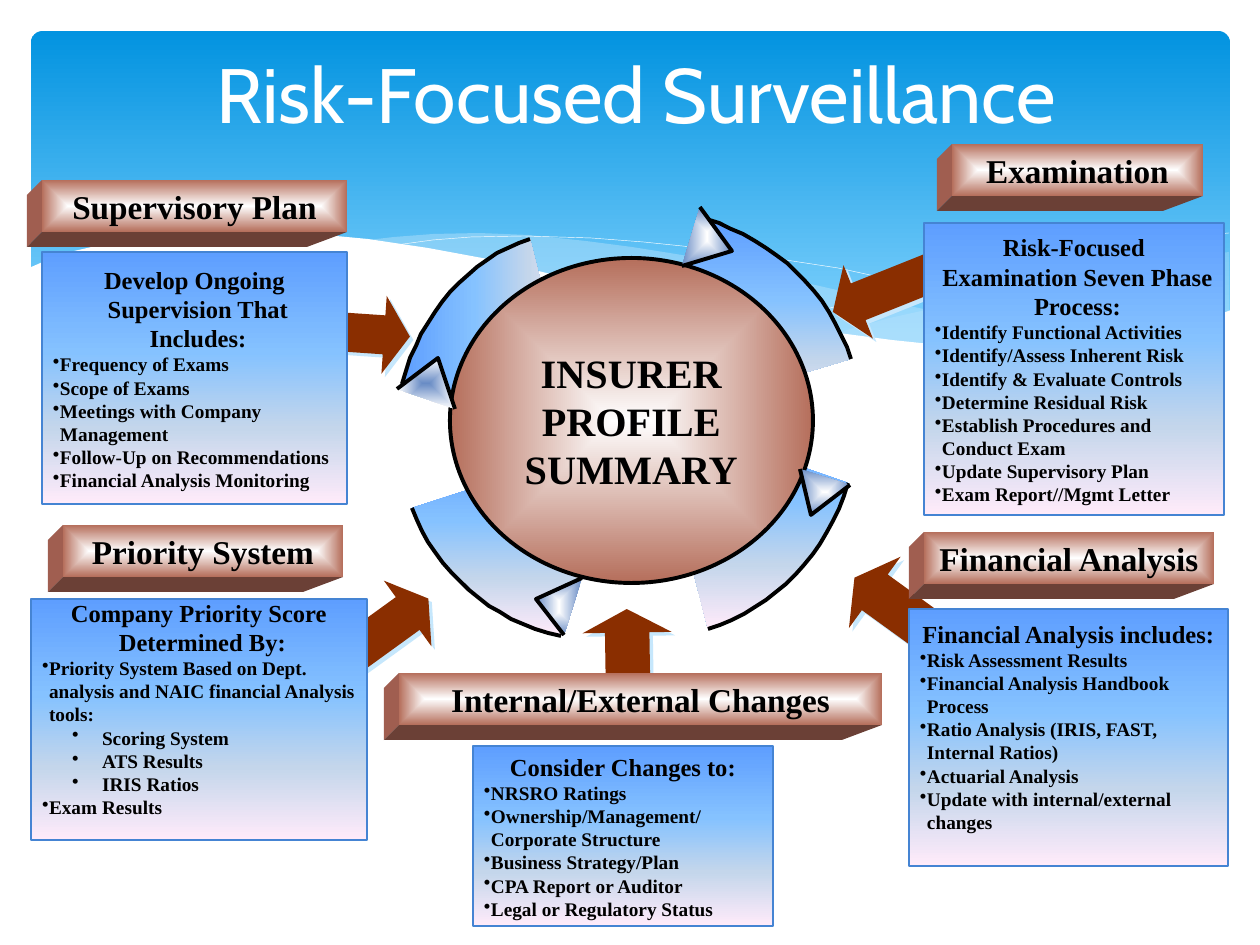
from dataclasses import dataclass

from lxml import etree
from pptx import Presentation
from pptx import util as u
from pptx.dml.color import RGBColor
from pptx.enum import shapes, text
from pptx.oxml import parse_xml
from pptx.oxml.ns import nsdecls, qn

PX = 914400 / 126


@dataclass(frozen=True)
class Theme:
    serif: str = "Times New Roman"
    sans: str = "Cabin"
    title: int = 44
    hub: int = 23
    bar: int = 19
    heading: int = 14
    body: int = 11
    black: str = "000000"
    white: str = "FFFFFF"
    wave: str = "C6E7FC"
    arrow: str = "8A2E00"
    bar_side: str = "A05E50"
    bar_base: str = "6B4036"
    border: str = "4584D3"
    sky: tuple = ((0, "0293E0"), (90, "83D3FE"))
    panel: tuple = ((0, "5E9EFF"), (40, "85C2FF"), (70, "C4D6EB"), (100, "FFEBFA"))
    copper: tuple = ((0, "FFFFFF"), (100, "B56E5B"))
    steel: tuple = ((0, "FFFFFF"), (100, "698CC5"))
    steel_dark: tuple = ((0, "698CC5"), (100, "FFFFFF"))


THEME = Theme()


def px(*lengths):
    return [u.Emu(round(length * PX)) for length in lengths]


def paint(shape, fill=None, line=None, width=0.75, alpha=None, angle=90):
    """Fill with a colour or gradient stops; an angle of None runs from the centre."""
    shape.shadow.inherit = False
    shape.fill.background()
    if isinstance(fill, str):
        shape.fill.solid()
        shape.fill.fore_color.rgb = RGBColor.from_string(fill)
        if alpha:
            color = next(shape._element.spPr.iter(qn("a:srgbClr")))
            etree.SubElement(color, qn("a:alpha")).set("val", str(alpha * 1000))
    elif fill:
        stops = "".join(f'<a:gs pos="{position * 1000}"><a:srgbClr val="{color}"/></a:gs>'
                        for position, color in fill)
        direction = f'<a:lin ang="{(angle or 0) * 60000}" scaled="0"/>'
        if angle is None:
            direction = ('<a:path path="rect"><a:fillToRect l="50000" t="50000" '
                         'r="50000" b="50000"/></a:path>')
        properties = shape._element.spPr
        properties.replace(properties.find(qn("a:noFill")), parse_xml(
            f'<a:gradFill {nsdecls("a")} rotWithShape="1"><a:gsLst>{stops}</a:gsLst>'
            f'{direction}</a:gradFill>'))
    if line:
        shape.line.color.rgb = RGBColor.from_string(line)
        shape.line.width = u.Pt(width)
    else:
        shape.line.fill.background()
    return shape


def add_preset(slide, kind, box, **style):
    return paint(slide.shapes.add_shape(kind, *px(*box)), **style)


def add_outline(slide, points, close=True, **style):
    builder = slide.shapes.build_freeform(*points[0], scale=PX)
    builder.add_line_segments(points[1:], close=close)
    return paint(builder.convert_to_shape(), **style)


def set_frame(shape, bottom=6, right=11):
    frame = shape.text_frame
    frame.word_wrap = True
    frame.vertical_anchor = text.MSO_ANCHOR.MIDDLE
    frame.margin_left, frame.margin_top, frame.margin_right, frame.margin_bottom = px(
        11, 6, right, bottom)
    return frame


def format_paragraph(paragraph, size, color=THEME.black, name=THEME.serif, bold=True,
                     align=text.PP_ALIGN.CENTER):
    paragraph.alignment = align
    for run in paragraph.runs:
        font = run.font
        font.size, font.name, font.bold = u.Pt(size), name, bold
        font.color.rgb = RGBColor.from_string(color)


def indent(paragraph, left, hanging, bullet):
    properties = paragraph._p.get_or_add_pPr()
    left, hanging = px(left, hanging)
    properties.set("marL", str(left))
    properties.set("indent", str(-hanging))
    if bullet:
        etree.SubElement(properties, qn("a:buChar")).set("char", "•")


def add_backdrop(slide):
    banner = add_preset(slide, shapes.MSO_SHAPE.ROUNDED_RECTANGLE, (31, 31, 1199, 340),
                        fill=THEME.sky)
    banner.adjustments[0] = 0.034
    right_wave = [
        (1229, 252), (1178, 260), (1123, 268), (1085, 277), (1014, 293), (949, 305), (890, 318),
        (833, 334), (871, 339), (922, 345), (969, 348), (1012, 350), (1052, 349), (1087, 347),
        (1121, 342), (1150, 337), (1178, 329), (1229, 311)]
    long_wave = [
        (1125, 344), (1055, 334), (977, 320), (890, 302), (793, 280), (736, 265), (682, 255),
        (632, 247), (586, 241), (529, 235), (479, 233), (433, 234), (394, 237), (360, 241),
        (407, 248), (456, 256), (509, 266), (566, 280), (619, 292), (713, 312), (799, 329),
        (876, 340), (943, 347), (1003, 350), (1056, 350), (1104, 348)]
    crests = [
        [(389, 246), (433, 240), (471, 237), (524, 236), (591, 238), (643, 242), (701, 248),
         (766, 257), (838, 268), (916, 285), (1002, 304), (1095, 329), (1143, 343)],
        [(772, 324), (823, 310), (876, 296), (942, 281), (1016, 265), (1091, 251), (1146, 242),
         (1198, 236), (1229, 233)]]
    white_wave = [
        (1231, 310), (1196, 323), (1159, 334), (1117, 342), (1071, 347), (1019, 349), (959, 347),
        (892, 340), (816, 330), (730, 315), (634, 294), (563, 277), (493, 260), (428, 248),
        (368, 239), (315, 234), (266, 232), (223, 232), (184, 233), (150, 236), (120, 241),
        (96, 246), (74, 251), (58, 256), (45, 261), (29, 268), (29, 415), (1231, 415)]
    add_outline(slide, right_wave, fill=THEME.wave, alpha=29)
    add_outline(slide, long_wave, fill=THEME.wave, alpha=40)
    for crest in crests:
        add_outline(slide, crest, close=False, line=THEME.white, width=0.25)
    add_outline(slide, white_wave, fill=THEME.white)


def add_title(slide, box, wording):
    frame = set_frame(slide.shapes.add_textbox(*px(*box)), right=30)
    frame.text = wording
    format_paragraph(frame.paragraphs[0], THEME.title, THEME.white, THEME.sans, bold=False)


def add_arrow(slide, box, rotation, head):
    arrow = add_preset(slide, shapes.MSO_SHAPE.LEFT_ARROW, box, fill=THEME.arrow)
    arrow.adjustments[0], arrow.adjustments[1] = 0.5, head
    arrow.rotation = rotation
    effects = arrow._element.spPr.find(qn("a:effectLst"))
    effects.append(parse_xml(
        f'<a:outerShdw {nsdecls("a")} dist="35560" dir="2700000" algn="ctr" rotWithShape="0">'
        f'<a:srgbClr val="{THEME.wave}"/></a:outerShdw>'))


def add_sweep(slide, curve, centre, angle):
    """Draw a wedge from the centre whose outer Bezier edge alone is outlined."""
    def point(t):
        weights = ((1 - t) ** 3, 3 * t * (1 - t) ** 2, 3 * t * t * (1 - t), t ** 3)
        return tuple(round(sum(w * p[axis] for w, p in zip(weights, curve))) for axis in (0, 1))

    edge = [point(step / 16) for step in range(17)]
    add_outline(slide, edge + [centre], fill=THEME.panel, angle=angle)
    add_outline(slide, edge, close=False, line=THEME.black, width=2.25)


def add_cycle(slide, hub_box):
    sweeps = [
        (((848, 483), (828, 553), (775, 608), (708, 629)), (653, 415), 90),
        (((561, 636), (491, 621), (435, 571), (412, 508)), (610, 444), 90),
        (((706, 219), (775, 241), (829, 292), (851, 359)), (636, 423), 90),
        (((402, 384), (421, 314), (469, 258), (530, 239)), (583, 451), 0)]
    tips = [
        (((700, 207), (732, 251), (682, 266)), THEME.steel),
        (((564, 635), (536, 599), (582, 578)), THEME.steel),
        (((850, 485), (811, 515), (800, 469)), THEME.steel),
        (((397, 389), (438, 358), (455, 409)), THEME.steel_dark)]
    for curve, centre, angle in sweeps:
        add_sweep(slide, curve, centre, angle)
    hub = add_preset(slide, shapes.MSO_SHAPE.OVAL, hub_box, fill=THEME.copper, angle=None,
                     line=THEME.black, width=2.25)
    frame = set_frame(hub)
    frame.text = "INSURER PROFILE\nSUMMARY"
    for paragraph in frame.paragraphs:
        format_paragraph(paragraph, THEME.hub)
    for points, stops in tips:
        add_outline(slide, points, close=False, fill=stops, angle=None,
                    line=THEME.black, width=2.25)


def add_bar(slide, left, top, width, label, height=52, depth=15, taper=40):
    """Add a label bar with a solid-looking left side and base."""
    right, bottom = left + width, top + height
    back = left - depth
    add_outline(slide, [(left, top), (back, top + depth), (back, bottom + depth),
                        (left, bottom)], fill=THEME.bar_side)
    add_outline(slide, [(left, bottom), (back, bottom + depth),
                        (right - taper, bottom + depth), (right, bottom)], fill=THEME.bar_base)
    face = add_preset(slide, shapes.MSO_SHAPE.RECTANGLE, (left, top, width, height),
                      fill=THEME.copper, angle=None)
    frame = set_frame(face)
    frame.text = label
    format_paragraph(frame.paragraphs[0], THEME.bar)


def add_panel(slide, box, heading, items, bottom=6):
    """Add a panel; a nested tuple among the items is a second level."""
    panel = add_preset(slide, shapes.MSO_SHAPE.RECTANGLE, box, fill=THEME.panel,
                       line=THEME.border)
    frame = set_frame(panel, bottom)
    frame.text = heading
    indent(frame.paragraphs[0], 7, 7, bullet=False)
    format_paragraph(frame.paragraphs[0], THEME.heading)
    for item in items:
        nested = isinstance(item, tuple)
        for line in item if nested else [item]:
            paragraph = frame.add_paragraph()
            paragraph.text = line
            paragraph.level = int(nested)
            indent(paragraph, *((60, 30) if nested else (7, 7)), bullet=True)
            format_paragraph(paragraph, THEME.body, align=text.PP_ALIGN.LEFT)


ARROWS = [
    ((580, 612, 95, 89), 89.1, 0.265), ((829, 252, 110, 79), 338.2, 0.345),
    ((845, 563, 100, 88), 35.9, 0.285), ((336, 588, 102, 81), 144.1, 0.315),
    ((305, 294, 105, 78), 183.9, 0.332)]
TOPICS = [
    ((399, 673, 483, "Internal/External Changes"), (473, 746, 300, 180), "Consider Changes to:",
     ["NRSRO Ratings", "Ownership/Management/ Corporate Structure", "Business Strategy/Plan",
      "CPA Report or Auditor", "Legal or Regulatory Status"], 6),
    ((952, 144, 251, "Examination"), (924, 223, 300, 292),
     "Risk-Focused Examination Seven Phase Process:",
     ["Identify Functional Activities", "Identify/Assess Inherent Risk",
      "Identify & Evaluate Controls", "Determine Residual Risk",
      "Establish Procedures and Conduct Exam", "Update Supervisory Plan",
      "Exam Report//Mgmt Letter"], 6),
    ((63, 525, 280, "Priority System"), (31, 599, 336, 241),
     "Company Priority Score Determined By:",
     ["Priority System Based on Dept. analysis and NAIC financial Analysis tools:",
      ("Scoring System", "ATS Results", "IRIS Ratios"), "Exam Results"], 29),
    ((42, 180, 305, "Supervisory Plan"), (42, 252, 305, 252),
     "Develop Ongoing Supervision That Includes:",
     ["Frequency of Exams", "Scope of Exams", "Meetings with Company Management",
      "Follow-Up on Recommendations", "Financial Analysis Monitoring"], 6),
    ((924, 532, 290, "Financial Analysis"), (909, 609, 319, 257), "Financial Analysis includes:",
     ["Risk Assessment Results", "Financial Analysis Handbook Process",
      "Ratio Analysis (IRIS, FAST, Internal Ratios)", "Actuarial Analysis",
      "Update with internal/external changes"], 29)]


def main():
    presentation = Presentation()
    presentation.slide_width, presentation.slide_height = px(1260, 945)
    slide = presentation.slides.add_slide(presentation.slide_layouts[6])
    add_backdrop(slide)
    add_cycle(slide, (450, 258, 363, 325))
    for arrow in ARROWS:
        add_arrow(slide, *arrow)
    for bar, box, heading, items, bottom in TOPICS:
        add_bar(slide, *bar)
        add_panel(slide, box, heading, items, bottom)
    add_title(slide, (95, 38, 1102, 110), "Risk-Focused Surveillance")
    presentation.save("out.pptx")


if __name__ == "__main__":
    main()
